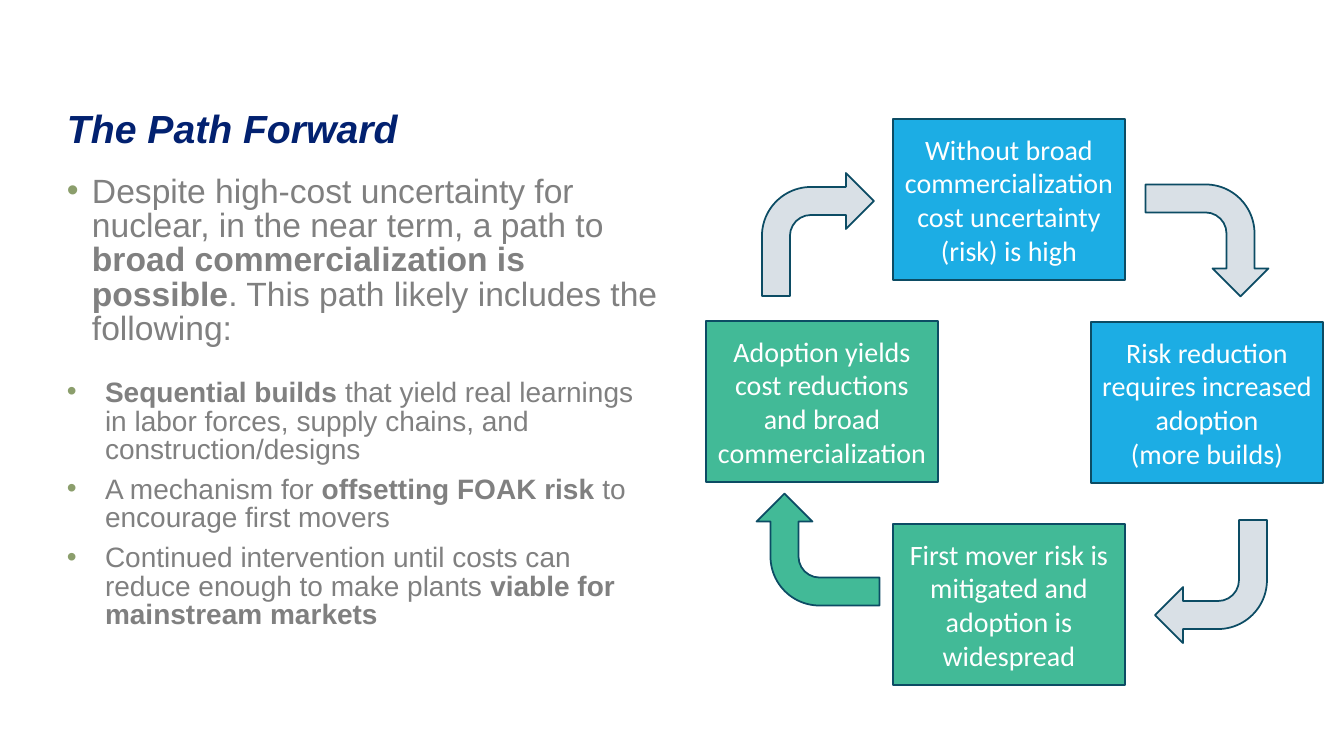
from lxml import etree
from pptx import Presentation
from pptx import util as u
from pptx.dml.color import RGBColor
from pptx.enum import shapes, text
from pptx.oxml.ns import qn

SCALE = 9144000 / 1008
COLORS = {
    "title": "022170", "body": "808080", "bullet": "8B9E6C", "text": "FFFFFF",
    "blue": "1CADE4", "green": "42BA97", "gray": "D9E0E6", "outline": "0C4C64",
}
POINTS = [
    (25, 24, 0, [("Despite high-cost uncertainty for nuclear, in the near term, a path to ", False),
                 ("broad commercialization is possible", True),
                 (". This path likely includes the following:", False)]),
    (38, 20, 23, [("Sequential builds", True),
                  (" that yield real learnings in labor forces, supply chains, and construction/designs", False)]),
    (38, 20, 8, [("A mechanism for ", False), ("offsetting FOAK risk", True),
                 (" to encourage first movers", False)]),
    (38, 20, 8, [("Continued intervention until costs can reduce enough to make plants ", False),
                 ("viable for mainstream markets", True)]),
]
STAGE_SIZE = (232, 161)
STAGES = [
    (187, 0, "blue", ["Without broad commercialization cost uncertainty (risk) is high"]),
    (385, 203, "blue", ["Risk reduction requires increased adoption", "(more builds)"]),
    (187, 405, "green", ["First mover risk is mitigated and adoption is widespread"]),
    (0, 202, "green", ["Adoption yields cost reductions and broad commercialization"]),
]
ARROW_SIZE = (112, 123)
ARROWS = [
    (56, 54, 0, "gray"),
    (445, 60, 90, "gray"),
    (449, 401, 180, "gray"),
    (56, 369, 270, "green"),
]


def px(length):
    return u.Emu(round(length * SCALE))


def color(name):
    return RGBColor.from_string(COLORS[name])


def set_font(font, name, size, shade):
    font.name = name
    font.size = u.Pt(size)
    font.color.rgb = color(shade)


def clear_margins(frame):
    frame.margin_left = frame.margin_top = frame.margin_right = frame.margin_bottom = 0
    frame.word_wrap = True


def add_bullet(para, indent):
    properties = para._p.get_or_add_pPr()
    properties.set("marL", str(px(indent)))
    properties.set("indent", str(-px(indent)))
    shade = etree.SubElement(properties, qn("a:buClr"))
    etree.SubElement(shade, qn("a:srgbClr"), val=COLORS["bullet"])
    etree.SubElement(properties, qn("a:buFont"), typeface="Arial")
    etree.SubElement(properties, qn("a:buChar"), char="•")


def add_title(page, left, top, width, height):
    title = page.shapes.title
    title.left, title.top, title.width, title.height = map(px, (left, top, width, height))
    frame = title.text_frame
    clear_margins(frame)
    frame.vertical_anchor = text.MSO_ANCHOR.MIDDLE
    frame.text = "The Path Forward"
    para = frame.paragraphs[0]
    para.alignment = text.PP_ALIGN.LEFT
    para.line_spacing = 0.85
    set_font(para.font, "Arial", 28, "title")
    para.font.bold = para.font.italic = True


def add_points(page, left, top, width, height):
    box = page.shapes.add_textbox(*map(px, (left, top, width, height)))
    frame = box.text_frame
    clear_margins(frame)
    for index, (indent, size, gap, spans) in enumerate(POINTS):
        para = frame.add_paragraph() if index else frame.paragraphs[0]
        para.line_spacing = 0.85
        para.space_before = u.Pt(gap)
        add_bullet(para, indent)
        set_font(para.font, "Arial", size, "body")
        for words, bold in spans:
            span = para.add_run()
            span.text = words
            span.font.bold = bold


def add_block(page, kind, left, top, size, fill):
    block = page.shapes.add_shape(kind, px(left), px(top), *map(px, size))
    block.shadow.inherit = False
    block.fill.solid()
    block.fill.fore_color.rgb = color(fill)
    block.line.color.rgb = color("outline")
    block.line.width = u.Pt(1.25)
    return block


def add_cycle(page, left, top):
    for x, y, fill, lines in STAGES:
        stage = add_block(page, shapes.MSO_SHAPE.RECTANGLE, left + x, top + y, STAGE_SIZE, fill)
        frame = stage.text_frame
        frame.word_wrap = True
        frame.vertical_anchor = text.MSO_ANCHOR.MIDDLE
        frame.text = "\n".join(lines)
        for para in frame.paragraphs:
            para.alignment = text.PP_ALIGN.CENTER
            set_font(para.font, "Calibri", 20, "text")
    for x, y, turn, fill in ARROWS:
        arrow = add_block(page, shapes.MSO_SHAPE.BENT_ARROW, left + x, top + y, ARROW_SIZE, fill)
        arrow.rotation = turn


def main():
    deck = Presentation()
    deck.slide_width, deck.slide_height = px(1344), px(756)
    page = deck.slides.add_slide(deck.slide_layouts[5])
    add_title(page, 67, 111, 1210, 41)
    add_points(page, 67, 176, 593, 499)
    add_cycle(page, 706, 119)
    deck.save("out.pptx")


if __name__ == "__main__":
    main()
